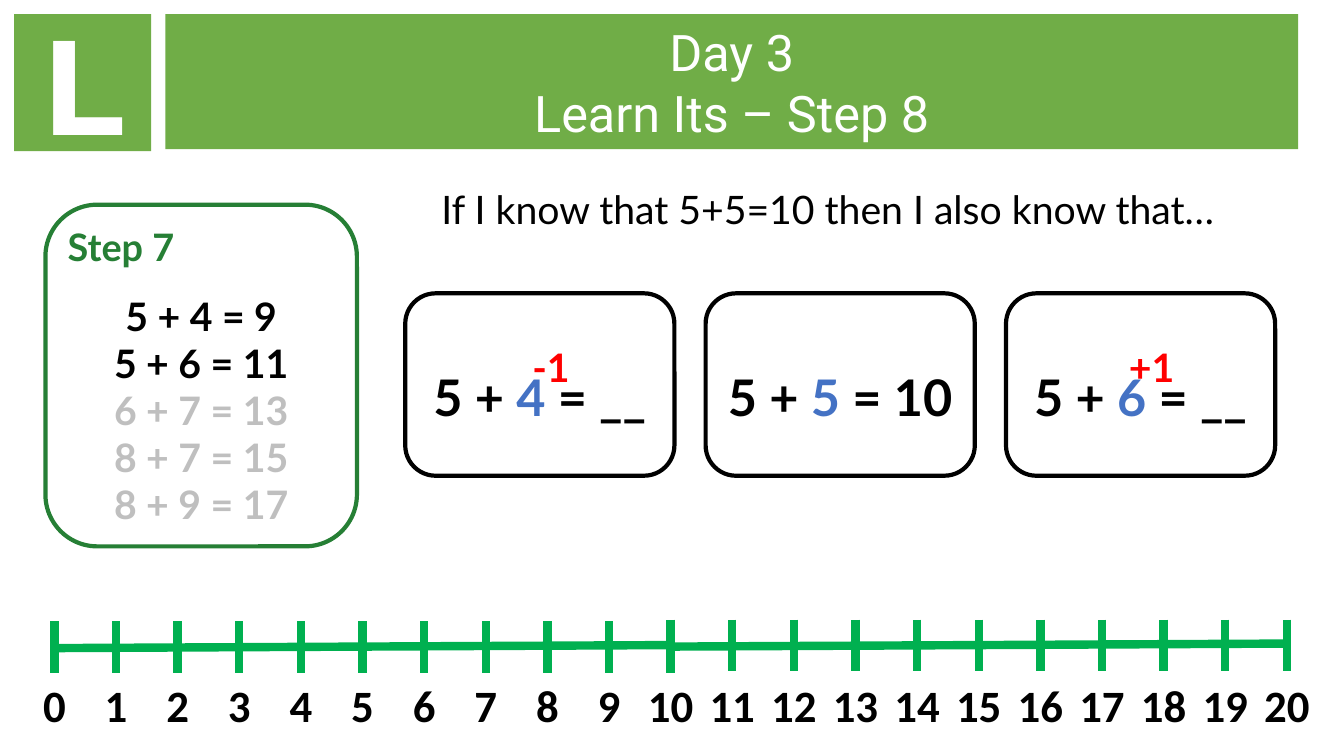
"""Build the Day 3 Learn Its slide: number facts above a number line to 20."""
import lxml.etree
import pptx
import pptx.dml.color
import pptx.enum.shapes
import pptx.enum.text
import pptx.oxml.ns
import pptx.util

COLORS = {
    "banner": "70AD47", "step": "267F35", "number line": "00B050",
    "changed": "4472C4", "hint": "FF0000", "later": "BFBFBF",
    "black": "000000", "white": "FFFFFF",
}
CENTER = pptx.enum.text.PP_ALIGN.CENTER
LEFT = pptx.enum.text.PP_ALIGN.LEFT
MIDDLE = pptx.enum.text.MSO_ANCHOR.MIDDLE
TOP = pptx.enum.text.MSO_ANCHOR.TOP
RECTANGLE = pptx.enum.shapes.MSO_SHAPE.RECTANGLE
ROUNDED = pptx.enum.shapes.MSO_SHAPE.ROUNDED_RECTANGLE
STRAIGHT = pptx.enum.shapes.MSO_CONNECTOR.STRAIGHT

presentation = pptx.Presentation()
presentation.slide_width = pptx.util.Inches(13.333)
presentation.slide_height = pptx.util.Inches(7.5)
slide = presentation.slides.add_slide(presentation.slide_layouts[5])


def area(left, top, right_or_width, bottom_or_height):
    """Turn percentages of the slide's width and height into lengths."""
    column = presentation.slide_width / 100
    row = presentation.slide_height / 100
    return (round(left * column), round(top * row),
            round(right_or_width * column), round(bottom_or_height * row))


def write(paragraph, text, size=28, font="Lato", color="black", bold=True, align=CENTER):
    """Add one formatted run to a paragraph."""
    paragraph.alignment = align
    run = paragraph.add_run()
    run.text = text
    run.font.size = pptx.util.Pt(size)
    run.font.name = font
    run.font.bold = bold
    run.font.color.rgb = pptx.dml.color.RGBColor.from_string(COLORS[color])


title = slide.shapes.title
title.left, title.top, title.width, title.height = area(1.05, 1.87, 10.2, 18.13)
title.fill.solid()
title.fill.fore_color.rgb = pptx.dml.color.RGBColor.from_string(COLORS["banner"])
title.text_frame.auto_size = pptx.enum.text.MSO_AUTO_SIZE.NONE
title.text_frame.vertical_anchor = TOP
title.text_frame.paragraphs[0].line_spacing = 0.9
write(title.text_frame.paragraphs[0], "L", size=96, font="Montserrat", color="white")

box_left, box_pitch = 30.15, 22.35
panels = [
    (RECTANGLE, area(12.3, 1.87, 84.3, 17.87), "banner", None),
    (ROUNDED, area(3.38, 27.07, 23.18, 45.2), "white", "step"),
]
for box in range(3):
    panels.append((ROUNDED, area(box_left + box * box_pitch, 38.8, 20.03, 24.13), "white", "black"))

frames = []
for kind, place, fill, outline in panels:
    panel = slide.shapes.add_shape(kind, *place)
    panel.shadow.inherit = False
    panel.fill.solid()
    panel.fill.fore_color.rgb = pptx.dml.color.RGBColor.from_string(COLORS[fill])
    frame = panel.text_frame
    frame.word_wrap = True
    frame.vertical_anchor = MIDDLE
    if outline:
        panel.line.color.rgb = pptx.dml.color.RGBColor.from_string(COLORS[outline])
        panel.line.width = pptx.util.Pt(3)
        frame.margin_left = frame.margin_right = pptx.util.Inches(0.07)
        frame.margin_top = frame.margin_bottom = pptx.util.Inches(0.04)
    else:
        panel.line.fill.background()
    frames.append(frame)
banner, step, *equations = frames

write(banner.paragraphs[0], "Day 3", size=36, font="Roboto", color="white", bold=False)
write(banner.add_paragraph(), "Learn Its – Step 8", size=36, font="Roboto", color="white", bold=False)

write(step.paragraphs[0], "Step 7", size=27, color="step", align=LEFT)
step.paragraphs[0].space_after = pptx.util.Pt(17)
facts = ["5 + 4 = 9", "5 + 6 = 11", "6 + 7 = 13", "8 + 7 = 15", "8 + 9 = 17"]
for index, fact in enumerate(facts):
    write(step.add_paragraph(), fact, color="black" if index < 2 else "later")

for frame, changed, answer in zip(equations, "456", ["__", "10", "__"]):
    frame.margin_top = pptx.util.Inches(0.28)
    write(frame.paragraphs[0], "5 + ", size=36)
    write(frame.paragraphs[0], changed, size=36, color="changed")
    write(frame.paragraphs[0], f" = {answer}", size=36)

labels = [
    (area(32.1, 23.87, 60.83, 7.6), "If I know that 5+5=10 then I also know that…",
     {"bold": False, "align": LEFT}),
]
for box, hint in [(0, "-1"), (2, "+1")]:
    labels.append((area(box_left + 4.95 + box * box_pitch, 44.8, 11.78, 7.6), hint, {"color": "hint"}))

line_left, tick_pitch = 4.05, 4.585
label_width = 7.88
for number in range(21):
    left = line_left + number * tick_pitch - label_width / 2
    labels.append((area(left, 88.93, label_width, 8.53), str(number), {"size": 32, "font": "Calibri"}))

for place, text, text_format in labels:
    label = slide.shapes.add_textbox(*place)
    label.text_frame.word_wrap = True
    write(label.text_frame.paragraphs[0], text, **text_format)

strokes = []
for half in range(2):
    start = line_left + half * 10 * tick_pitch
    rise = half * 0.2
    strokes.append(area(start, 85.73 - rise, start + 10 * tick_pitch, 85.33 - rise))
    for tick in range(11):
        across = start + tick * tick_pitch
        strokes.append(area(across, 82.15 - rise, across, 89 - rise))

for ends in strokes:
    stroke = slide.shapes.add_connector(STRAIGHT, *ends)
    stroke.line.color.rgb = pptx.dml.color.RGBColor.from_string(COLORS["number line"])
    stroke.line.width = pptx.util.Pt(6)
    lxml.etree.SubElement(stroke._element.spPr, pptx.oxml.ns.qn("a:effectLst"))

presentation.save("out.pptx")
